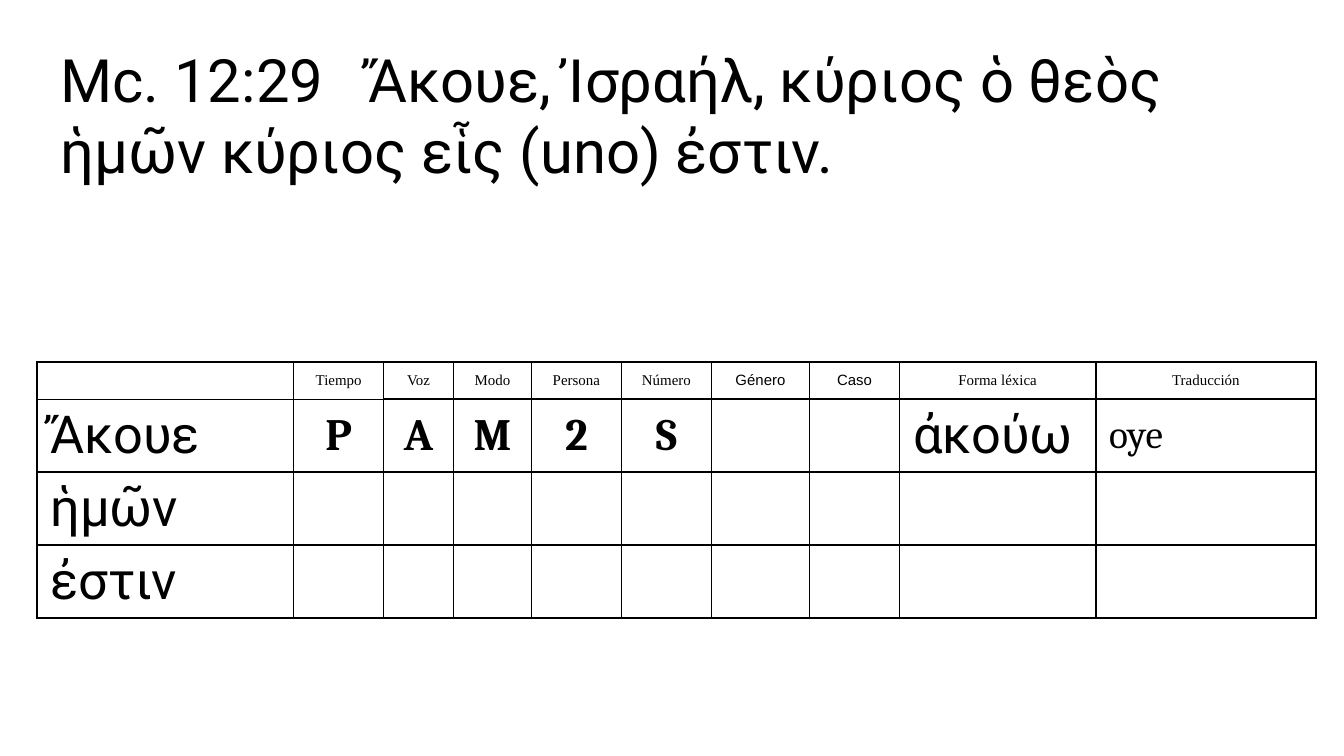
"""Build a slide with a Greek verse and its parsing table."""
import lxml.etree
import pptx
import pptx.dml.color
import pptx.enum.text
import pptx.oxml.ns
import pptx.util

BLACK = pptx.dml.color.RGBColor(0, 0, 0)
LEFT = pptx.enum.text.PP_ALIGN.LEFT
CENTER = pptx.enum.text.PP_ALIGN.CENTER
MIDDLE = pptx.enum.text.MSO_ANCHOR.MIDDLE
qn = pptx.oxml.ns.qn


def format_paragraph(paragraph, font_name, size, alignment, bold=False):
    paragraph.alignment = alignment
    for run in paragraph.runs:
        run.font.name = font_name
        run.font.size = pptx.util.Pt(size)
        run.font.bold = bold
        run.font.color.rgb = BLACK


def add_border(cell, side, width):
    properties = cell._tc.get_or_add_tcPr()
    line = lxml.etree.SubElement(properties, qn(f"a:ln{side}"), w=str(pptx.util.Pt(width)))
    fill = lxml.etree.SubElement(line, qn("a:solidFill"))
    lxml.etree.SubElement(fill, qn("a:srgbClr"), val=str(BLACK))


presentation = pptx.Presentation()
presentation.slide_width = pptx.util.Inches(10)
presentation.slide_height = presentation.slide_width * 9 // 16
percent_x = presentation.slide_width / 100
percent_y = presentation.slide_height / 100
slide = presentation.slides.add_slide(presentation.slide_layouts[5])

title = slide.shapes.title
title.left, title.top = int(3.5 * percent_x), int(4.6 * percent_y)
title.width, title.height = int(92.9 * percent_x), int(21 * percent_y)
title.text_frame.text = "Mc. 12:29\tἌκουε, Ἰσραήλ, κύριος ὁ θεὸς ἡμῶν κύριος εἷς (uno) ἐστιν."
title.text_frame.vertical_anchor = MIDDLE
title.text_frame.word_wrap = True
title.text_frame.auto_size = pptx.enum.text.MSO_AUTO_SIZE.NONE
verse = title.text_frame.paragraphs[0]
format_paragraph(verse, "Roboto", 32, LEFT)
tab_stops = lxml.etree.SubElement(verse._p.get_or_add_pPr(), qn("a:tabLst"))
lxml.etree.SubElement(tab_stops, qn("a:tab"), pos=str(pptx.util.Inches(2.29)), algn="l")

rows = [
    ["", "Tiempo", "Voz", "Modo", "Persona", "Número", "Género", "Caso", "Forma léxica", "Traducción"],
    ["Ἄκουε", "P", "A", "M", "2", "S", "", "", "ἀκούω", "oye"],
    ["ἡμῶν"] + [""] * 9,
    ["ἐστιν"] + [""] * 9,
]
column_shares = [19.1, 6.7, 5.2, 5.8, 6.7, 6.7, 7.3, 6.7, 14.6, 16.4]
row_shares = [4.9, 9.65, 9.65, 9.65]

frame = slide.shapes.add_table(
    len(rows), len(column_shares),
    int(2.75 * percent_x), int(47.9 * percent_y),
    int(sum(column_shares) * percent_x), int(sum(row_shares) * percent_y),
)
table = frame.table
table.first_row = False
table.horz_banding = False
for column, share in zip(table.columns, column_shares):
    column.width = int(share * percent_x)
for row, share in zip(table.rows, row_shares):
    row.height = int(share * percent_y)

for row_index, words in enumerate(rows):
    for column_index, word in enumerate(words):
        cell = table.cell(row_index, column_index)
        cell.vertical_anchor = MIDDLE
        cell.margin_left = cell.margin_right = pptx.util.Inches(0.1)
        cell.margin_top = cell.margin_bottom = pptx.util.Inches(0.04)
        rule = 0.75 if column_index < 2 else 1
        top_rule = 1 if row_index == 0 else rule
        for side, width in (("L", 1), ("R", 1), ("T", top_rule), ("B", rule)):
            add_border(cell, side, width)
        cell.fill.background()

        cell.text_frame.text = word
        paragraph = cell.text_frame.paragraphs[0]
        if not word:
            lxml.etree.SubElement(paragraph._p, qn("a:endParaRPr"), sz="800")
        elif row_index == 0:
            header_font = "Arial" if word in ("Género", "Caso") else "Times New Roman"
            format_paragraph(paragraph, header_font, 8, CENTER)
        elif column_index in (0, 8):
            format_paragraph(paragraph, "Roboto", 28, LEFT)
        elif column_index == 9:
            format_paragraph(paragraph, "Cambria", 21, LEFT)
        else:
            format_paragraph(paragraph, "Cambria", 24, CENTER, bold=True)

presentation.save("out.pptx")
